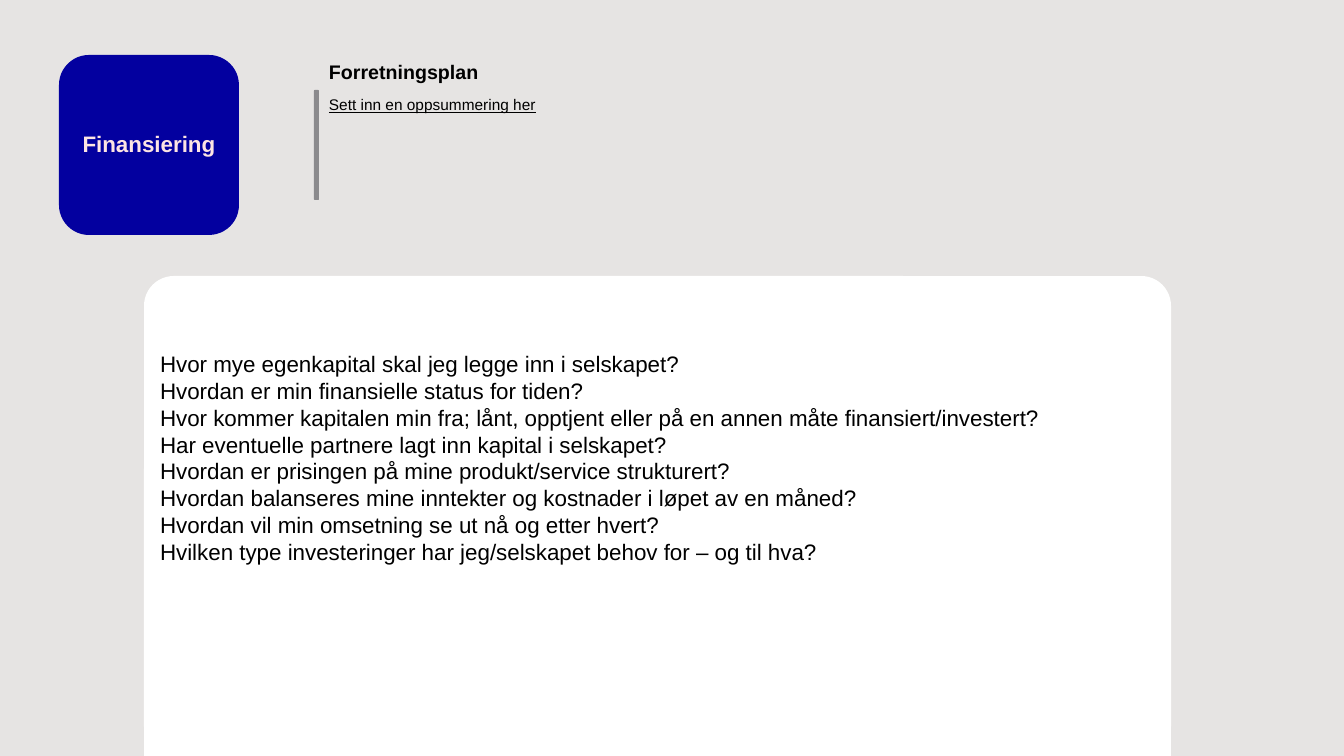
import pptx
import pptx.util
import pptx.dml.color
import pptx.enum.shapes
import pptx.enum.text

SCALE = 914400 / 100.8
SHAPE = pptx.enum.shapes.MSO_SHAPE
ALIGN = pptx.enum.text.PP_ALIGN
ANCHOR = pptx.enum.text.MSO_ANCHOR

QUESTIONS = [
    "Hvor mye egenkapital skal jeg legge inn i selskapet?",
    "Hvordan er min finansielle status for tiden?",
    "Hvor kommer kapitalen min fra; lånt, opptjent eller på en annen måte finansiert/investert?",
    "Har eventuelle partnere lagt inn kapital i selskapet?",
    "Hvordan er prisingen på mine produkt/service strukturert?",
    "Hvordan balanseres mine inntekter og kostnader i løpet av en måned?",
    "Hvordan vil min omsetning se ut nå og etter hvert?",
    "Hvilken type investeringer har jeg/selskapet behov for – og til hva?",
]


def px(n):
    return pptx.util.Emu(round(n * SCALE))


def rgb(code):
    return pptx.dml.color.RGBColor.from_string(code)


def add_box(slide, x, y, w, h, fill=None, kind=SHAPE.ROUNDED_RECTANGLE, radius=None):
    sp = slide.shapes.add_shape(kind, px(x), px(y), px(w), px(h))
    sp.shadow.inherit = False
    sp.line.fill.background()
    if fill:
        sp.fill.solid()
        sp.fill.fore_color.rgb = rgb(fill)
    else:
        sp.fill.background()
    if radius is not None:
        sp.adjustments[0] = radius
    return sp


def write(sp, lines, size=16, color="000000", bold=False, underline=False,
          align=ALIGN.LEFT, anchor=ANCHOR.MIDDLE, spacing=None, side=10):
    tf = sp.text_frame
    tf.word_wrap = True
    tf.vertical_anchor = anchor
    tf.margin_left = tf.margin_right = px(side)
    tf.margin_top = tf.margin_bottom = px(5)
    for i, line in enumerate(lines):
        p = tf.add_paragraph() if i else tf.paragraphs[0]
        p.alignment = align
        p.line_spacing = spacing
        r = p.add_run()
        r.text = line
        r.font.name = "Arial"
        r.font.size = pptx.util.Pt(size)
        r.font.bold = bold
        r.font.underline = underline
        r.font.color.rgb = rgb(color)


def add_label(slide, x, y, w, h, text, **style):
    sp = slide.shapes.add_textbox(px(x), px(y), px(w), px(h))
    write(sp, [text], anchor=ANCHOR.TOP, **style)


def main():
    prs = pptx.Presentation()
    prs.slide_width, prs.slide_height = px(1344), px(756)
    slide = prs.slides.add_slide(prs.slide_layouts[6])

    add_box(slide, 0, 0, 1344, 756, "E6E4E3", SHAPE.RECTANGLE)
    add_box(slide, 144, 276, 1027, 480, "FFFFFF", radius=0.062)
    questions = add_box(slide, 144, 277, 1027, 361, radius=0.057)
    write(questions, QUESTIONS)

    topic = add_box(slide, 59, 55, 180, 180, "03009F")
    write(topic, ["Finansiering"], color="FDE4E3", bold=True,
          align=ALIGN.CENTER, spacing=0.9, side=0)

    add_label(slide, 319, 90, 383, 29, "Sett inn en oppsummering her", size=11, underline=True)
    add_box(slide, 314, 90, 5, 110, "8B8A8D")
    add_box(slide, 144, 713, 1027, 43, "FFFFFF", SHAPE.RECTANGLE)
    add_label(slide, 319, 55, 383, 34, "Forretningsplan", size=14, bold=True)

    prs.save("out.pptx")


if __name__ == "__main__":
    main()
